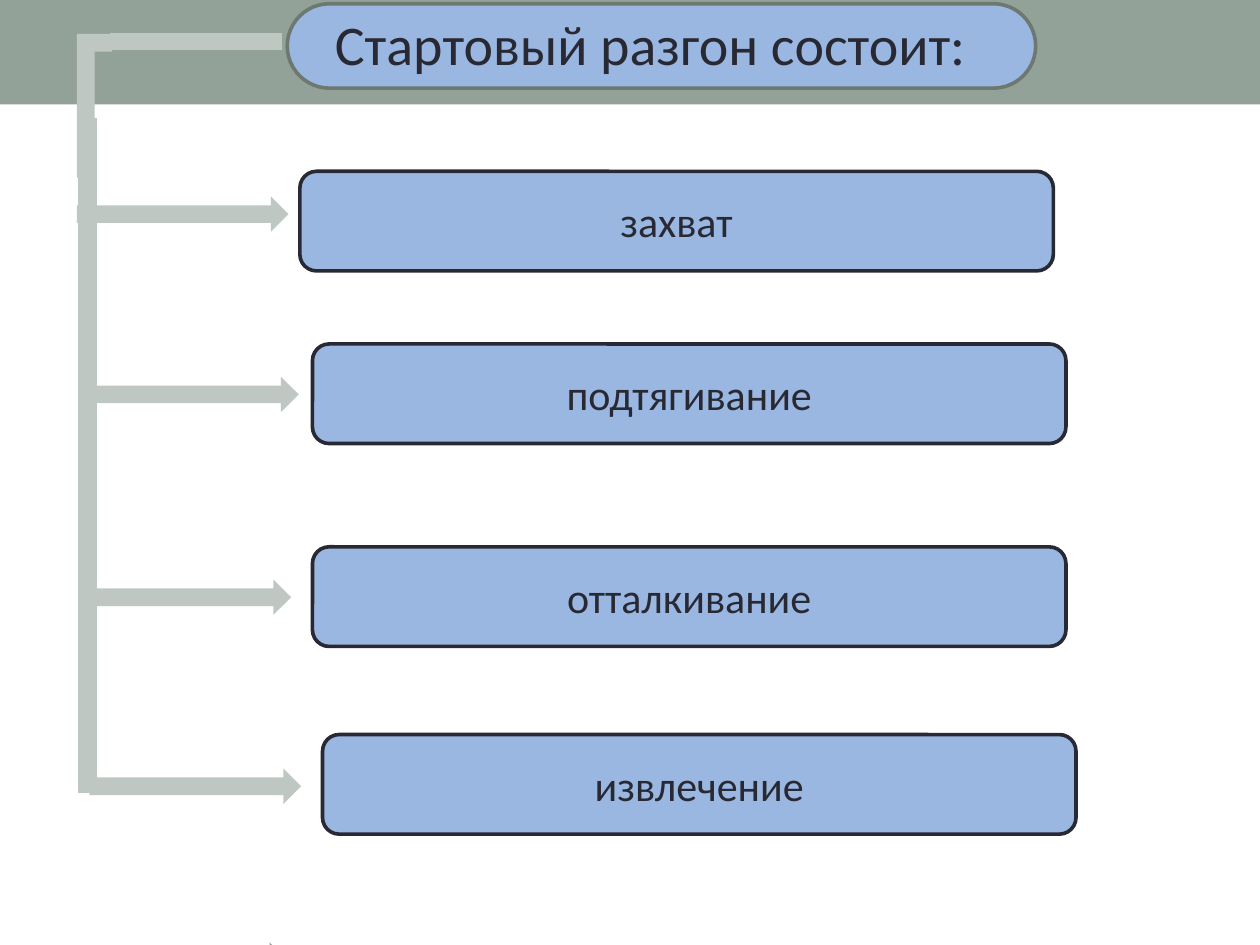
from pptx import Presentation
from pptx.dml.color import RGBColor
from pptx.enum.shapes import MSO_SHAPE
from pptx.enum.text import MSO_ANCHOR, MSO_AUTO_SIZE, PP_ALIGN
from pptx.util import Inches, Pt

RECT, ROUND = MSO_SHAPE.RECTANGLE, MSO_SHAPE.ROUNDED_RECTANGLE
ARROW, MINUS = MSO_SHAPE.RIGHT_ARROW, MSO_SHAPE.MATH_MINUS
CORNER = MSO_SHAPE.CORNER
MIDDLE, CENTER, LEFT = MSO_ANCHOR.MIDDLE, PP_ALIGN.CENTER, PP_ALIGN.LEFT
FIT = MSO_AUTO_SIZE.SHAPE_TO_FIT_TEXT

THEME = {
    "font": "Calibri", "head": 32, "body": 24, "edge": 2.08,
    "band": "93A299", "box": "9AB7E2", "rim": "6D7871",
    "ink": "292934", "pale": "BEC7C2",
}

deck = Presentation()
deck.slide_width, deck.slide_height = Inches(10), Inches(7.5)
slide = deck.slides.add_slide(deck.slide_layouts[6])
shapes = slide.shapes

# Grid of 100 columns by 75 rows
COL, ROW = deck.slide_width / 100, deck.slide_height / 75


def draw(kind, x, y, wide, high, fill, line=None):
    part = shapes.add_shape(kind, int(x * COL), int(y * ROW),
                            int(wide * COL), int(high * ROW))
    part.shadow.inherit = False
    part.fill.solid()
    part.fill.fore_color.rgb = RGBColor.from_string(THEME[fill])
    if line:
        part.line.color.rgb = RGBColor.from_string(THEME[line])
        part.line.width = Pt(THEME["edge"])
    else:
        part.line.fill.background()
    return part


def write(frame, text, size, align):
    frame.text = text
    para = frame.paragraphs[0]
    para.alignment = align
    font = para.runs[0].font
    font.name, font.size = THEME["font"], Pt(THEME[size])
    font.color.rgb = RGBColor.from_string(THEME["ink"])


# Header band
for top, high in ((0, 4), (3.6, 4.7)):
    draw(RECT, 0, top, 100, high, "band")

# Title pill and its text
pill = draw(ROUND, 22.8, 0.3, 59.4, 6.7, "box", "rim")
pill.adjustments[0] = 0.5
title = shapes.add_textbox(int(25.6 * COL), int(0.3 * ROW),
                           int(54.3 * COL), int(7.1 * ROW)).text_frame
title.word_wrap = False
title.auto_size = FIT
write(title, "Стартовый разгон состоит:", "head", LEFT)

# Phases of the start run
phases = (("захват", 23.8, 13.6), ("подтягивание", 24.8, 27.3),
          ("отталкивание", 24.8, 43.4), ("извлечение", 25.6, 58.3))
for name, left, top in phases:
    box = draw(ROUND, left, top, 59.8, 7.9, "box", "ink")
    frame = box.text_frame
    frame.word_wrap = True
    frame.vertical_anchor = MIDDLE
    write(frame, name, "body", CENTER)

# Trunk: lower part, then upper part
for top, high in ((-40.6, 167.7), (-57.3, 174.4)):
    draw(MINUS, 5.9, top, 2.1, high, "pale")

# Branch arrows
arrows = ((6.1, 15.6, "pale"), (6.9, 29.9, "pale"), (6.3, 46, "pale"),
          (7.1, 61, "pale"), (6, 74.8, "band"))
for left, top, fill in arrows:
    draw(ARROW, left, top, 16.8, 2.8, fill)

# Bend and bar that join the trunk to the title
bend = draw(CORNER, 1.8, 7, 11.4, 2.8, "pale")
bend.rotation = 90
draw(MINUS, 6.3, 0.3, 18.5, 6, "pale")

deck.save("out.pptx")
